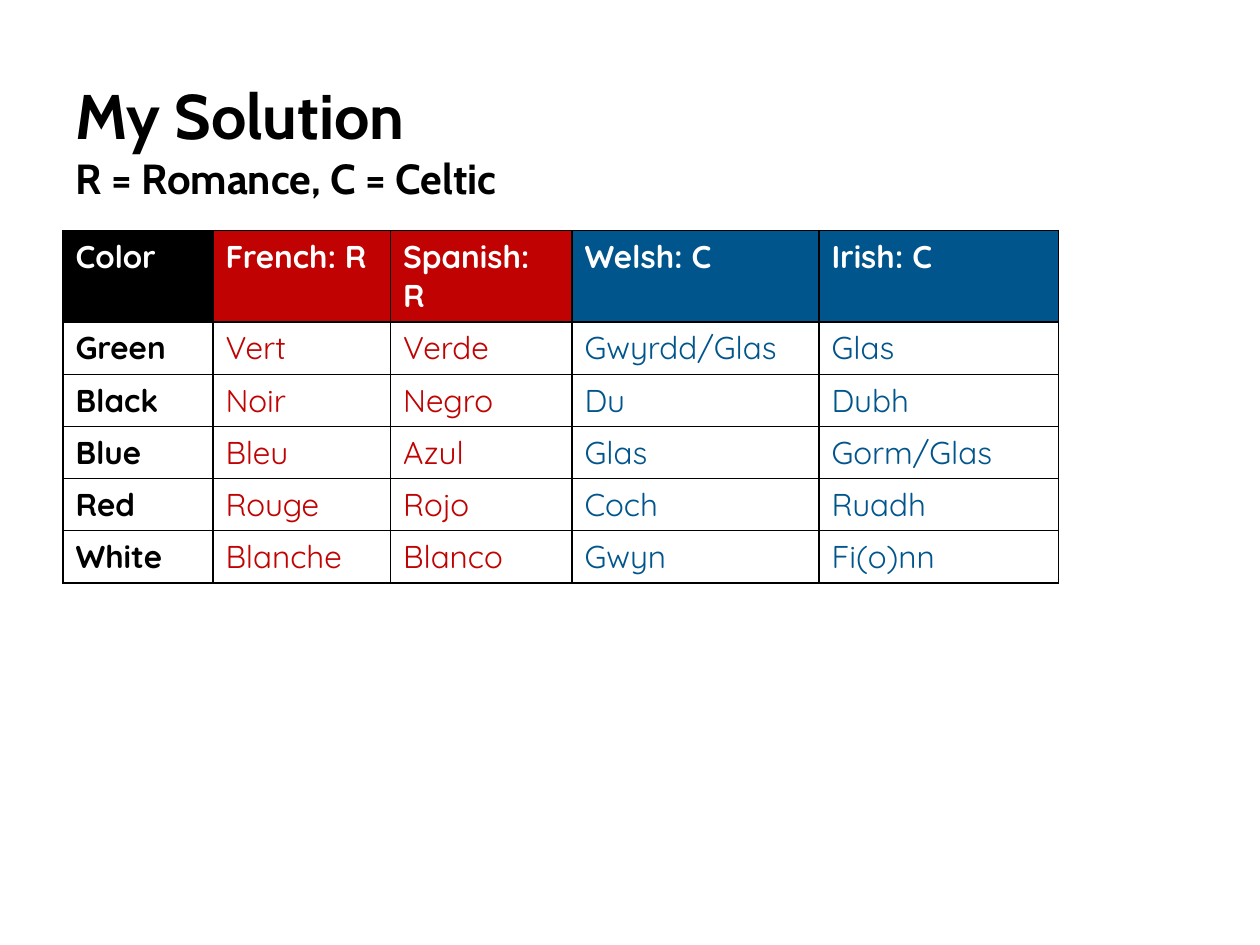
from dataclasses import dataclass

from lxml import etree
from pptx import Presentation
from pptx.dml.color import RGBColor
from pptx.enum import text
from pptx.oxml.ns import qn
from pptx.util import Inches, Pt


@dataclass(frozen=True)
class Theme:
    black: str = "000000"
    white: str = "FFFFFF"
    romance: str = "C00202"
    celtic: str = "00558C"
    title_font: str = "Cabin"
    table_font: str = "Quicksand"
    title_size: int = 36
    subtitle_size: int = 24
    table_size: int = 18
    border: int = 1


class SlideBuilder:
    def __init__(self, prs, theme):
        self.theme = theme
        self.s = prs.slides.add_slide(prs.slide_layouts[5])

    def format_run(self, r, color, **values):
        for name, value in values.items():
            setattr(r.font, name, value)
        r.font.color.rgb = RGBColor.from_string(color)

    def title(self, lines, left, top, width, height):
        sp = self.s.shapes.title
        box = {"left": left, "top": top, "width": width, "height": height}
        for name, value in box.items():
            setattr(sp, name, Inches(value))
        tf = sp.text_frame
        frame = {"word_wrap": True, "auto_size": text.MSO_AUTO_SIZE.NONE,
                 "vertical_anchor": text.MSO_ANCHOR.BOTTOM}
        for name, value in frame.items():
            setattr(tf, name, value)
        p = tf.paragraphs[0]
        p.alignment = text.PP_ALIGN.LEFT
        for i, (line, size) in enumerate(lines):
            if i:
                p.add_line_break()
            r = p.add_run()
            r.text = line
            self.format_run(r, self.theme.black, name=self.theme.title_font,
                            size=Pt(size), bold=True)

    def cell_borders(self, cell):
        tc_pr = cell._tc.get_or_add_tcPr()
        for i, side in enumerate(("lnL", "lnR", "lnT", "lnB")):
            ln = etree.Element(qn(f"a:{side}"), w=str(Pt(self.theme.border)))
            fill = etree.SubElement(ln, qn("a:solidFill"))
            etree.SubElement(fill, qn("a:srgbClr"), val=self.theme.black)
            tc_pr.insert(i, ln)

    def table(self, rows, colors, left, top, widths, row_height):
        frame = self.s.shapes.add_table(
            len(rows), len(widths), Inches(left), Inches(top),
            Inches(sum(widths)), Inches(row_height * len(rows)))
        table = frame.table
        for column, width in zip(table.columns, widths):
            column.width = Inches(width)
        for i, row in enumerate(rows):
            for j, (word, color) in enumerate(zip(row, colors)):
                header = i == 0
                cell = table.cell(i, j)
                cell.fill.solid()
                cell.fill.fore_color.rgb = RGBColor.from_string(
                    color if header else self.theme.white)
                self.cell_borders(cell)
                r = cell.text_frame.paragraphs[0].add_run()
                r.text = word
                self.format_run(r, self.theme.white if header else color,
                                name=self.theme.table_font,
                                size=Pt(self.theme.table_size),
                                bold=header or j == 0)


def main():
    theme = Theme()
    prs = Presentation()
    prs.slide_width, prs.slide_height = Inches(10), Inches(7.5)
    slide = SlideBuilder(prs, theme)

    # Title with the key to the language families
    slide.title([("My Solution", theme.title_size),
                 ("R = Romance, C = Celtic", theme.subtitle_size)],
                0.5, 0.41, 7.89, 1.25)

    # Colour words by language, one colour per family
    rows = [
        ("Color", "French: R", "Spanish: R", "Welsh: C", "Irish: C"),
        ("Green", "Vert", "Verde", "Gwyrdd/Glas", "Glas"),
        ("Black", "Noir", "Negro", "Du", "Dubh"),
        ("Blue", "Bleu", "Azul", "Glas", "Gorm/Glas"),
        ("Red", "Rouge", "Rojo", "Coch", "Ruadh"),
        ("White", "Blanche", "Blanco", "Gwyn", "Fi(o)nn"),
    ]
    colors = [theme.black] + [theme.romance] * 2 + [theme.celtic] * 2
    slide.table(rows, colors, 0.5, 1.83, [1.19, 1.41, 1.44, 1.96, 1.9], 0.41)

    prs.save("out.pptx")


if __name__ == "__main__":
    main()
